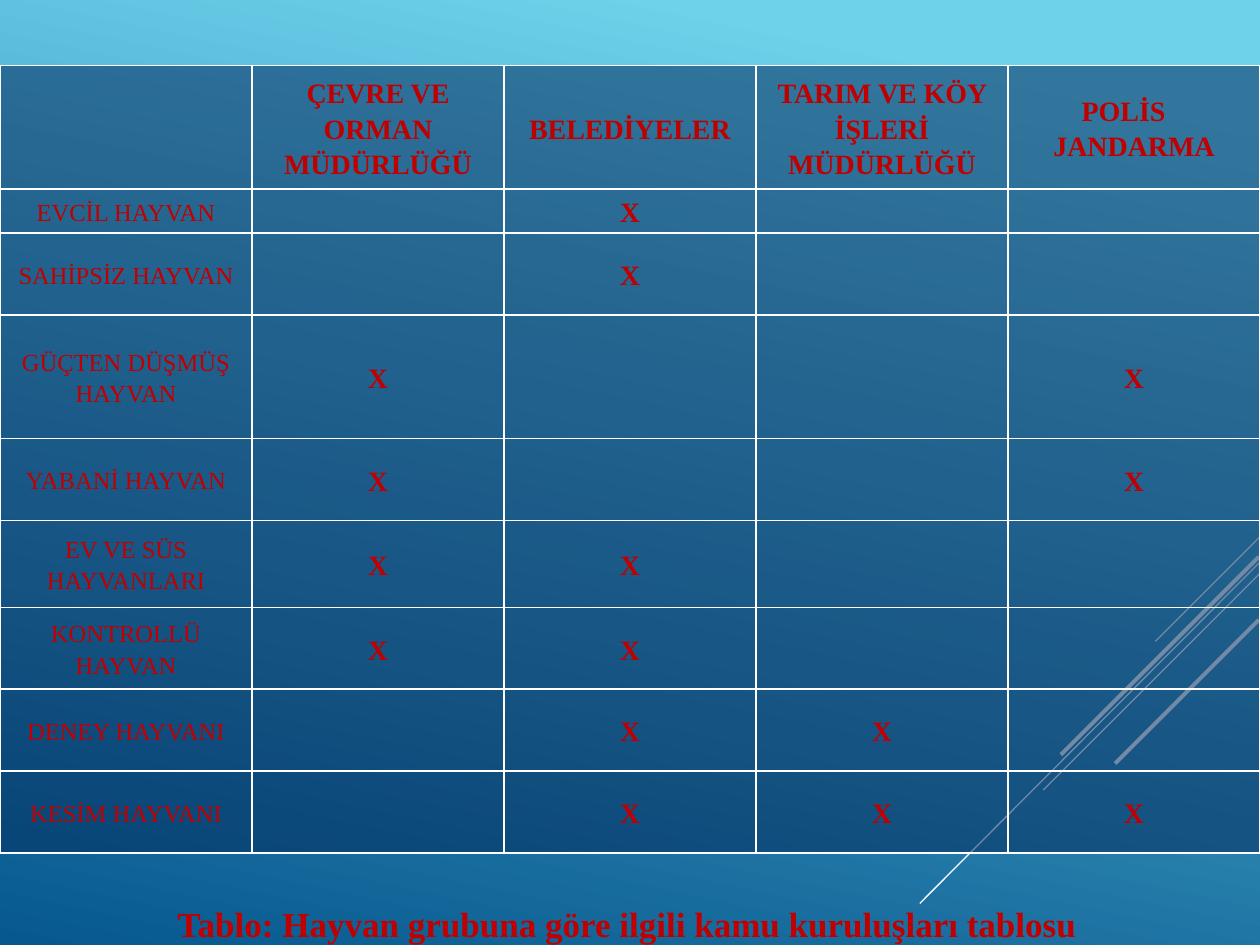
"""Build a slide with a table matching animal groups to responsible public bodies."""
import pptx
import pptx.util
import pptx.dml.color
import pptx.enum.shapes
import pptx.enum.text
import pptx.oxml
import pptx.oxml.ns
from lxml import etree

Inches = pptx.util.Inches
Pt = pptx.util.Pt
RGBColor = pptx.dml.color.RGBColor
qn = pptx.oxml.ns.qn

SKY = RGBColor(0x6E, 0xD2, 0xEB)
OCEAN = RGBColor(0x06, 0x58, 0x8E)
NAVY = RGBColor(0x05, 0x2F, 0x61)
WHITE = RGBColor(0xFF, 0xFF, 0xFF)
RED = RGBColor(0xC0, 0x00, 0x00)
FONT = "Times New Roman"
CELL_OPACITY = 56

CAPTION = "Tablo: Hayvan grubuna göre ilgili kamu kuruluşları tablosu"
BODIES = ["ÇEVRE VE ORMAN MÜDÜRLÜĞÜ", "BELEDİYELER",
          "TARIM VE KÖY İŞLERİ MÜDÜRLÜĞÜ", "POLİS    JANDARMA"]
HEADER_HEIGHT = 0.98
ANIMALS = [
    ("EVCİL HAYVAN", 0.35, {2}),
    ("SAHİPSİZ HAYVAN", 0.65, {2}),
    ("GÜÇTEN DÜŞMÜŞ HAYVAN", 0.98, {1, 4}),
    ("YABANİ HAYVAN", 0.65, {1, 4}),
    ("EV VE SÜS HAYVANLARI", 0.69, {1, 2}),
    ("KONTROLLÜ HAYVAN", 0.65, {1, 2}),
    ("DENEY HAYVANI", 0.65, {2, 3}),
    ("KESİM HAYVANI", 0.65, {2, 3, 4}),
]
# right end x, right end y, horizontal run, vertical run, width
DIAGONALS = [
    (10, 4.26, 0.83, 0.83, 0.75),
    (10, 4.46, 2.7, 2.71, 0.75),
    (10, 4.55, 1.72, 1.72, 0.75),
    (9.99, 4.42, 1.57, 1.57, 2.25),
    (9.99, 4.92, 1.14, 1.14, 2.25),
]


def style_paragraph(paragraph, size, bold, alignment):
    paragraph.alignment = alignment
    paragraph.line_spacing = 1.15
    paragraph.space_after = Pt(10)
    paragraph.font.name = FONT
    paragraph.font.size = Pt(size)
    paragraph.font.bold = bold
    paragraph.font.color.rgb = RED


def add_diagonal(slide, x, y, run, drop, width):
    line = slide.shapes.add_connector(
        pptx.enum.shapes.MSO_CONNECTOR.STRAIGHT,
        Inches(x), Inches(y), Inches(x - run), Inches(y + drop))
    line.line.color.rgb = WHITE
    line.line.width = Pt(width)
    etree.SubElement(line._element.spPr, qn("a:effectLst"))


def style_cell(cell):
    cell.margin_left = cell.margin_right = cell.margin_top = cell.margin_bottom = 0
    cell.vertical_anchor = pptx.enum.text.MSO_ANCHOR.MIDDLE
    cell.fill.solid()
    cell.fill.fore_color.rgb = NAVY
    properties = cell._tc.tcPr
    color = properties.find(".//" + qn("a:srgbClr"))
    etree.SubElement(color, qn("a:alpha"), val=str(CELL_OPACITY * 1000))
    for index, side in enumerate(("lnL", "lnR", "lnT", "lnB")):
        border = etree.Element(qn("a:" + side), w=str(Pt(1)))
        fill = etree.SubElement(border, qn("a:solidFill"))
        etree.SubElement(fill, qn("a:srgbClr"), val=str(WHITE))
        properties.insert(index, border)


def add_animal_table(slide):
    rows = [[""] + BODIES]
    rows += [[name] + ["X" if column in marks else "" for column in range(1, 5)]
             for name, _, marks in ANIMALS]
    heights = [HEADER_HEIGHT] + [height for _, height, _ in ANIMALS]
    table = slide.shapes.add_table(
        len(rows), len(rows[0]), 0, Inches(0.52), Inches(10), Inches(sum(heights))).table
    table.first_row = table.horz_banding = False
    for row_index, texts in enumerate(rows):
        table.rows[row_index].height = Inches(heights[row_index])
        for column_index, text in enumerate(texts):
            cell = table.cell(row_index, column_index)
            style_cell(cell)
            cell.text = text
            is_name = column_index == 0
            style_paragraph(cell.text_frame.paragraphs[0], 14 if is_name else 16,
                            not is_name, pptx.enum.text.PP_ALIGN.CENTER)


def add_caption(slide):
    frame = slide.shapes.add_textbox(
        Inches(1.31), Inches(7.06), Inches(7.39), Inches(0.46)).text_frame
    frame.word_wrap = False
    frame.auto_size = pptx.enum.text.MSO_AUTO_SIZE.SHAPE_TO_FIT_TEXT
    frame.text = CAPTION
    style_paragraph(frame.paragraphs[0], 20, True, pptx.enum.text.PP_ALIGN.JUSTIFY)


def main():
    presentation = pptx.Presentation()
    presentation.slide_width = Inches(10)
    presentation.slide_height = Inches(7.5)
    slide = presentation.slides.add_slide(presentation.slide_layouts[6])
    background = slide.background.fill
    background.gradient()
    background.gradient_angle = 360 - 102
    for stop, color, position in zip(background.gradient_stops, (SKY, OCEAN), (0.1, 1)):
        stop.color.rgb = color
        stop.position = position
    for diagonal in DIAGONALS:
        add_diagonal(slide, *diagonal)
    add_animal_table(slide)
    add_caption(slide)
    presentation.save("out.pptx")


if __name__ == "__main__":
    main()
